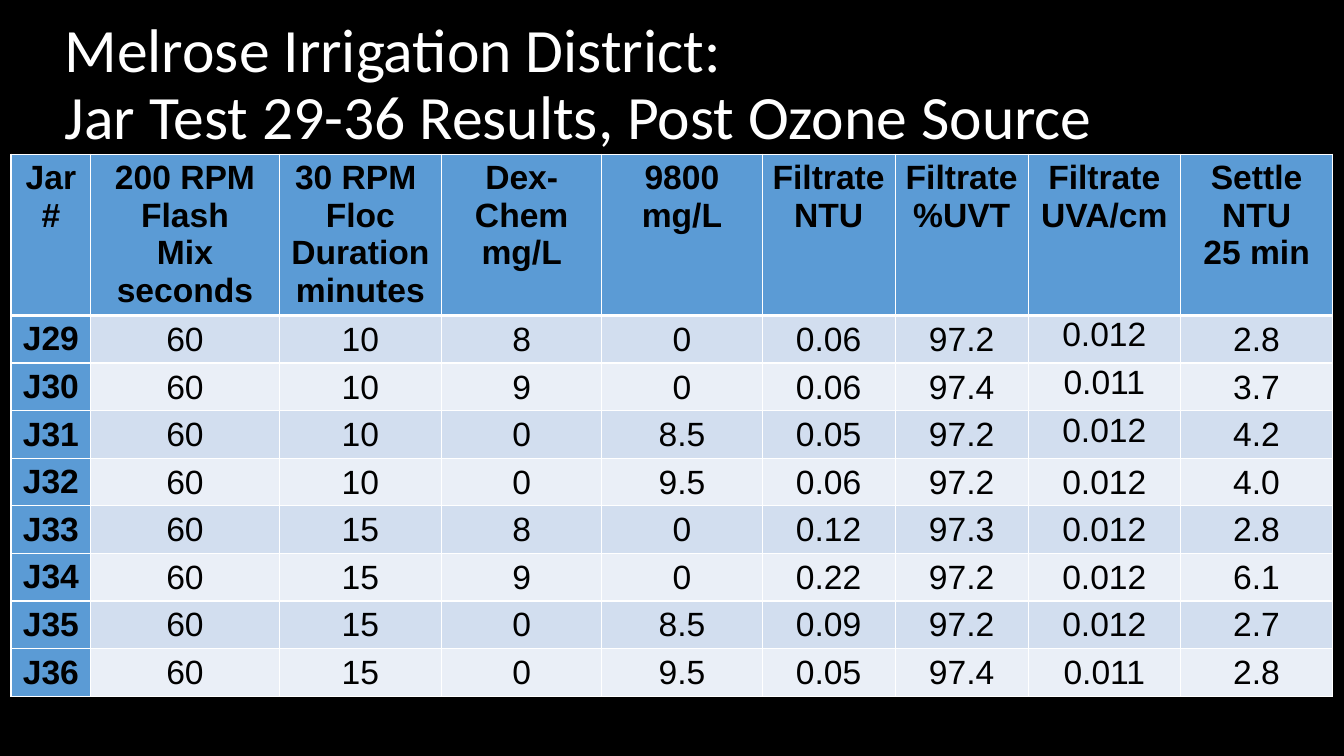
from dataclasses import dataclass

from lxml import etree
from pptx import Presentation
from pptx.dml.color import RGBColor
from pptx.enum.text import MSO_ANCHOR, MSO_AUTO_SIZE, PP_ALIGN
from pptx.oxml.ns import qn
from pptx.util import Inches, Pt

LEFT, CENTER = PP_ALIGN.LEFT, PP_ALIGN.CENTER
TOP, MIDDLE = MSO_ANCHOR.TOP, MSO_ANCHOR.MIDDLE
NO_AUTOFIT = MSO_AUTO_SIZE.NONE

COLORS = {
    "background": "000000",
    "title": "FFFFFF",
    "text": "000000",
    "border": "FFFFFF",
    "header": "5B9BD5",
    "odd": "D2DEEF",
    "even": "EAEFF7",
}
TITLE_LINES = [
    "Melrose Irrigation District:",
    "Jar Test 29-36 Results, Post Ozone Source",
]
HEADER_HEIGHT, ROW_HEIGHT = 1.6, 0.47
UVA_COLUMN, LAST_RAISED_ROW = 7, 3


@dataclass
class Column:
    lines: list[str]
    width: float


COLUMNS = [
    Column(["Jar", "#"], 0.79),
    Column(["200 RPM", "Flash", "Mix", "seconds"], 1.87),
    Column(["30 RPM ", "Floc", "Duration", "minutes"], 1.61),
    Column(["Dex-", "Chem", "mg/L"], 1.59),
    Column(["9800", "mg/L"], 1.59),
    Column(["Filtrate", "NTU"], 1.32),
    Column(["Filtrate", "%UVT"], 1.32),
    Column(["Filtrate", "UVA/cm"], 1.51),
    Column(["Settle", "NTU", "25 min"], 1.51),
]
RESULTS = [
    ["J29", "60", "10", "8", "0", "0.06", "97.2", "0.012", "2.8"],
    ["J30", "60", "10", "9", "0", "0.06", "97.4", "0.011", "3.7"],
    ["J31", "60", "10", "0", "8.5", "0.05", "97.2", "0.012", "4.2"],
    ["J32", "60", "10", "0", "9.5", "0.06", "97.2", "0.012", "4.0"],
    ["J33", "60", "15", "8", "0", "0.12", "97.3", "0.012", "2.8"],
    ["J34", "60", "15", "9", "0", "0.22", "97.2", "0.012", "6.1"],
    ["J35", "60", "15", "0", "8.5", "0.09", "97.2", "0.012", "2.7"],
    ["J36", "60", "15", "0", "9.5", "0.05", "97.4", "0.011", "2.8"],
]


def rgb(name: str) -> RGBColor:
    return RGBColor.from_string(COLORS[name])


def add_run(p, text: str, font: str, size: int, color: str, bold: bool) -> None:
    r = p.add_run()
    r.text = text
    r.font.name = font
    r.font.size = Pt(size)
    r.font.bold = bold
    r.font.color.rgb = rgb(color)


def add_title(slide) -> None:
    sp = slide.shapes.title
    sp.left, sp.top = Inches(0.54), Inches(0.13)
    sp.width, sp.height = Inches(11.88), Inches(1.45)
    tf = sp.text_frame
    tf.auto_size = NO_AUTOFIT
    tf.word_wrap = True
    tf.vertical_anchor = MIDDLE
    p = tf.paragraphs[0]
    p.alignment = LEFT
    p.line_spacing = 0.9
    for i, line in enumerate(TITLE_LINES):
        if i:
            p.add_line_break()
        add_run(p, line, "Calibri", 44, "title", False)


def set_borders(cell, row: int) -> None:
    widths = {
        "a:lnL": 1,
        "a:lnR": 1,
        "a:lnT": 3 if row == 1 else 1,
        "a:lnB": 3 if row == 0 else 1,
    }
    tc_pr = cell._tc.get_or_add_tcPr()
    for tag, width in widths.items():
        ln = etree.SubElement(tc_pr, qn(tag), w=str(Pt(width)))
        fill = etree.SubElement(ln, qn("a:solidFill"))
        etree.SubElement(fill, qn("a:srgbClr"), val=COLORS["border"])


def fill_cell(cell, lines: list[str], row: int, col: int) -> None:
    is_header = row == 0 or col == 0
    set_borders(cell, row)
    cell.fill.solid()
    cell.fill.fore_color.rgb = rgb("header" if is_header else "odd" if row % 2 else "even")
    cell.vertical_anchor = TOP
    if not is_header:
        cell.margin_left = cell.margin_right = cell.margin_top = Inches(0.01)
        cell.margin_bottom = 0
        if col != UVA_COLUMN or row > LAST_RAISED_ROW:
            cell.vertical_anchor = MIDDLE
    tf = cell.text_frame
    for i, line in enumerate(lines):
        p = tf.add_paragraph() if i else tf.paragraphs[0]
        p.alignment = CENTER
        add_run(p, line, "Arial", 24, "text", is_header)


def add_results_table(slide) -> None:
    heights = [HEADER_HEIGHT] + [ROW_HEIGHT] * len(RESULTS)
    table = slide.shapes.add_table(
        len(heights), len(COLUMNS), Inches(0.11), Inches(1.53),
        Inches(sum(c.width for c in COLUMNS)), Inches(sum(heights)),
    ).table
    for col, column in enumerate(COLUMNS):
        table.columns[col].width = Inches(column.width)
    for row, height in enumerate(heights):
        table.rows[row].height = Inches(height)
    content = [[c.lines for c in COLUMNS]] + [[[v] for v in values] for values in RESULTS]
    for row, cells in enumerate(content):
        for col, lines in enumerate(cells):
            fill_cell(table.cell(row, col), lines, row, col)


def main() -> None:
    prs = Presentation()
    prs.slide_width, prs.slide_height = Inches(13.33), Inches(7.5)
    slide = prs.slides.add_slide(prs.slide_layouts[5])
    slide.background.fill.solid()
    slide.background.fill.fore_color.rgb = rgb("background")
    add_title(slide)
    add_results_table(slide)
    prs.save("out.pptx")


if __name__ == "__main__":
    main()
